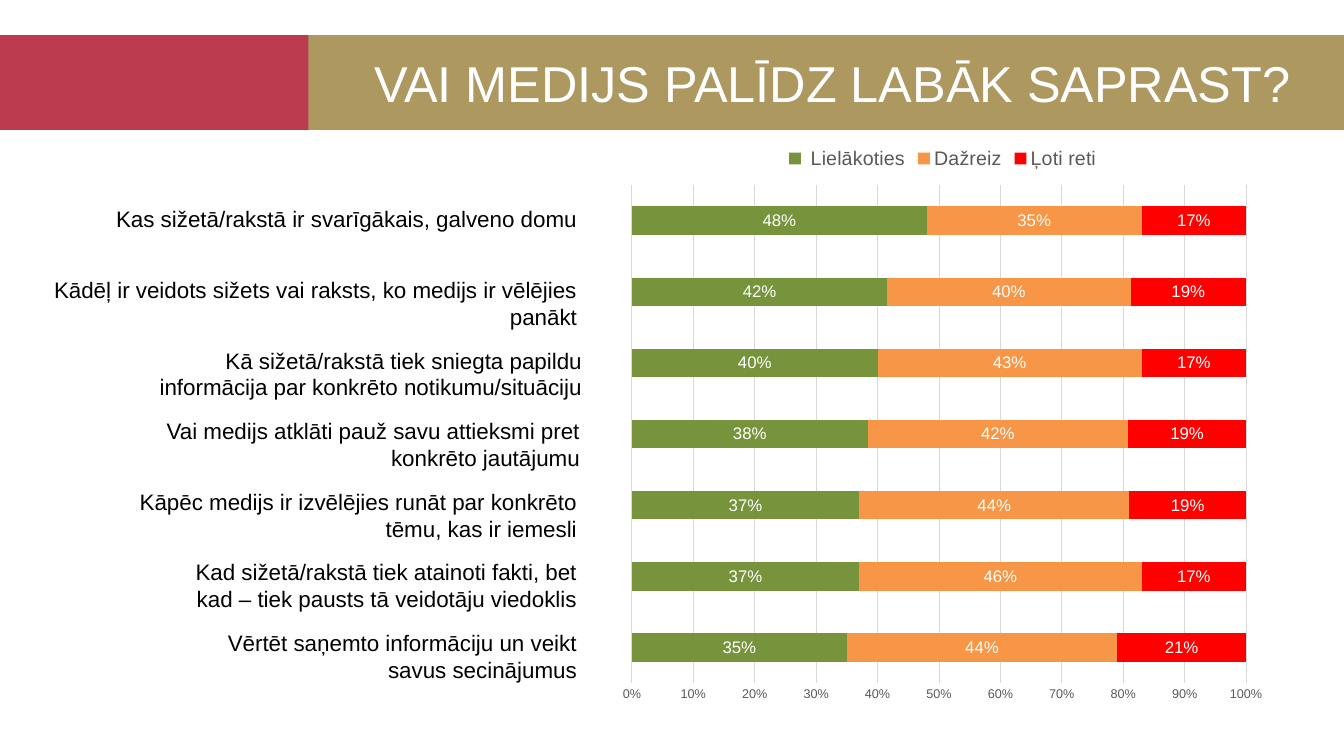
from lxml import etree
from pptx import Presentation
from pptx.chart.data import CategoryChartData
from pptx.dml.color import RGBColor
from pptx.enum.chart import XL_CHART_TYPE, XL_LABEL_POSITION, XL_LEGEND_POSITION, XL_TICK_MARK
from pptx.enum.shapes import MSO_SHAPE
from pptx.enum.text import MSO_ANCHOR, PP_ALIGN
from pptx.oxml.ns import qn
from pptx.util import Inches, Pt

CRIMSON = RGBColor(0xBD, 0x3B, 0x4F)
GOLD = RGBColor(0xAD, 0x98, 0x60)
GREEN = RGBColor(0x77, 0x93, 0x3C)
ORANGE = RGBColor(0xF7, 0x96, 0x46)
RED = RGBColor(0xFF, 0x00, 0x00)
WHITE = RGBColor(0xFF, 0xFF, 0xFF)
BLACK = RGBColor(0x00, 0x00, 0x00)
GRAY = RGBColor(0x59, 0x59, 0x59)
LIGHT_GRAY = RGBColor(0xD9, 0xD9, 0xD9)

QUESTION_TOP = 1.99
QUESTION_STEP = 0.7
QUESTIONS = [
    ("Kas sižetā/rakstā ir svarīgākais, galveno domu", 5.82, 5.82, 0.37),
    ("Kādēļ ir veidots sižets vai raksts, ko medijs ir vēlējies panākt", 5.82, 5.82, 0.64),
    ("Kā sižetā/rakstā tiek sniegta papildu informācija par konkrēto notikumu/situāciju", 5.87, 4.64, 0.64),
    ("Vai medijs atklāti pauž savu attieksmi pret konkrēto jautājumu", 5.85, 4.64, 0.64),
    ("Kāpēc medijs ir izvēlējies runāt par konkrēto tēmu, kas ir iemesli", 5.82, 4.64, 0.64),
    ("Kad sižetā/rakstā tiek atainoti fakti, bet kad – tiek pausts tā veidotāju viedoklis", 5.82, 4.13, 0.64),
    ("Vērtēt saņemto informāciju un veikt savus secinājumus", 5.82, 3.96, 0.64),
]
ANSWERS = [
    (" Lielākoties", GREEN, (0.35, 0.37, 0.37, 0.38, 0.4, 0.42, 0.48)),
    ("Dažreiz", ORANGE, (0.44, 0.46, 0.44, 0.42, 0.43, 0.4, 0.35)),
    ("Ļoti reti", RED, (0.21, 0.17, 0.19, 0.19, 0.17, 0.19, 0.17)),
]
PLOT_LAYOUT = {"x": 0.033, "y": 0.085, "w": 0.923, "h": 0.864}


class SlideBuilder:
    font_name = "Arial"

    def __init__(self, slide):
        self.slide = slide

    def style_font(self, font, size, color):
        font.name = self.font_name
        font.size = Pt(size)
        font.color.rgb = color

    def band(self, left, top, width, height, color):
        shape = self.slide.shapes.add_shape(
            MSO_SHAPE.RECTANGLE, Inches(left), Inches(top), Inches(width), Inches(height))
        shape.shadow.inherit = False
        shape.fill.solid()
        shape.fill.fore_color.rgb = color
        shape.line.fill.background()

    def text(self, words, left, top, width, height, size, color, alignment, anchor=MSO_ANCHOR.TOP):
        box = self.slide.shapes.add_textbox(
            Inches(left), Inches(top), Inches(width), Inches(height))
        frame = box.text_frame
        frame.word_wrap = True
        frame.vertical_anchor = anchor
        paragraph = frame.paragraphs[0]
        paragraph.alignment = alignment
        run = paragraph.add_run()
        run.text = words
        self.style_font(run.font, size, color)

    def answer_chart(self, left, top, width, height):
        data = CategoryChartData(number_format="0%")
        data.categories = [str(number) for number in range(1, len(QUESTIONS) + 1)]
        for name, _, values in ANSWERS:
            data.add_series(name, values)
        chart = self.slide.shapes.add_chart(
            XL_CHART_TYPE.BAR_STACKED_100, Inches(left), Inches(top),
            Inches(width), Inches(height), data).chart
        self.style_font(chart.font, 10, BLACK)
        chart.has_title = False
        chart.has_legend = True
        chart.legend.position = XL_LEGEND_POSITION.TOP
        chart.legend.include_in_layout = False
        self.style_font(chart.legend.font, 14, GRAY)
        chart.category_axis.visible = False
        self.style_value_axis(chart.value_axis)
        plot = chart.plots[0]
        plot.gap_width = 150
        plot.overlap = 100
        plot.vary_by_categories = False
        for series, (_, color, _) in zip(plot.series, ANSWERS):
            self.style_series(series, color)
        self.place_plot(chart)

    def style_value_axis(self, axis):
        axis.minimum_scale = 0
        axis.maximum_scale = 1
        axis.major_unit = 0.1
        axis.major_tick_mark = XL_TICK_MARK.NONE
        axis.minor_tick_mark = XL_TICK_MARK.NONE
        axis.format.line.fill.background()
        axis.has_major_gridlines = True
        grid_line = axis.major_gridlines.format.line
        grid_line.color.rgb = LIGHT_GRAY
        grid_line.width = Pt(0.75)
        axis.tick_labels.number_format = "0%"
        axis.tick_labels.number_format_is_linked = False
        self.style_font(axis.tick_labels.font, 9, GRAY)

    def style_series(self, series, color):
        series.format.fill.solid()
        series.format.fill.fore_color.rgb = color
        labels = series.data_labels
        labels.show_value = True
        labels.position = XL_LABEL_POSITION.CENTER
        labels.number_format = "0%"
        labels.number_format_is_linked = False
        self.style_font(labels.font, 12, WHITE)

    def place_plot(self, chart):
        plot_area = chart.plots[0]._element.getparent()
        for old_layout in plot_area.findall(qn("c:layout")):
            plot_area.remove(old_layout)
        layout = etree.Element(qn("c:layout"))
        manual = etree.SubElement(layout, qn("c:manualLayout"))
        settings = {"layoutTarget": "inner", "xMode": "edge", "yMode": "edge", **PLOT_LAYOUT}
        for tag, value in settings.items():
            etree.SubElement(manual, qn(f"c:{tag}")).set("val", str(value))
        plot_area.insert(0, layout)


def main():
    presentation = Presentation()
    presentation.slide_width = Inches(13.33)
    presentation.slide_height = Inches(7.5)
    builder = SlideBuilder(presentation.slides.add_slide(presentation.slide_layouts[6]))
    builder.band(0, 0.35, 13.23, 0.94, CRIMSON)
    builder.band(3.06, 0.35, 10.27, 0.94, GOLD)
    builder.text("VAI MEDIJS PALĪDZ LABĀK SAPRAST?", 3.36, 0.35, 9.8, 0.94,
                 36, WHITE, PP_ALIGN.CENTER, MSO_ANCHOR.MIDDLE)
    builder.answer_chart(6.05, 1.35, 6.6, 5.72)
    for row, (question, right, width, height) in enumerate(QUESTIONS):
        builder.text(question, right - width, QUESTION_TOP + row * QUESTION_STEP,
                     width, height, 16, BLACK, PP_ALIGN.RIGHT)
    presentation.save("out.pptx")


if __name__ == "__main__":
    main()
